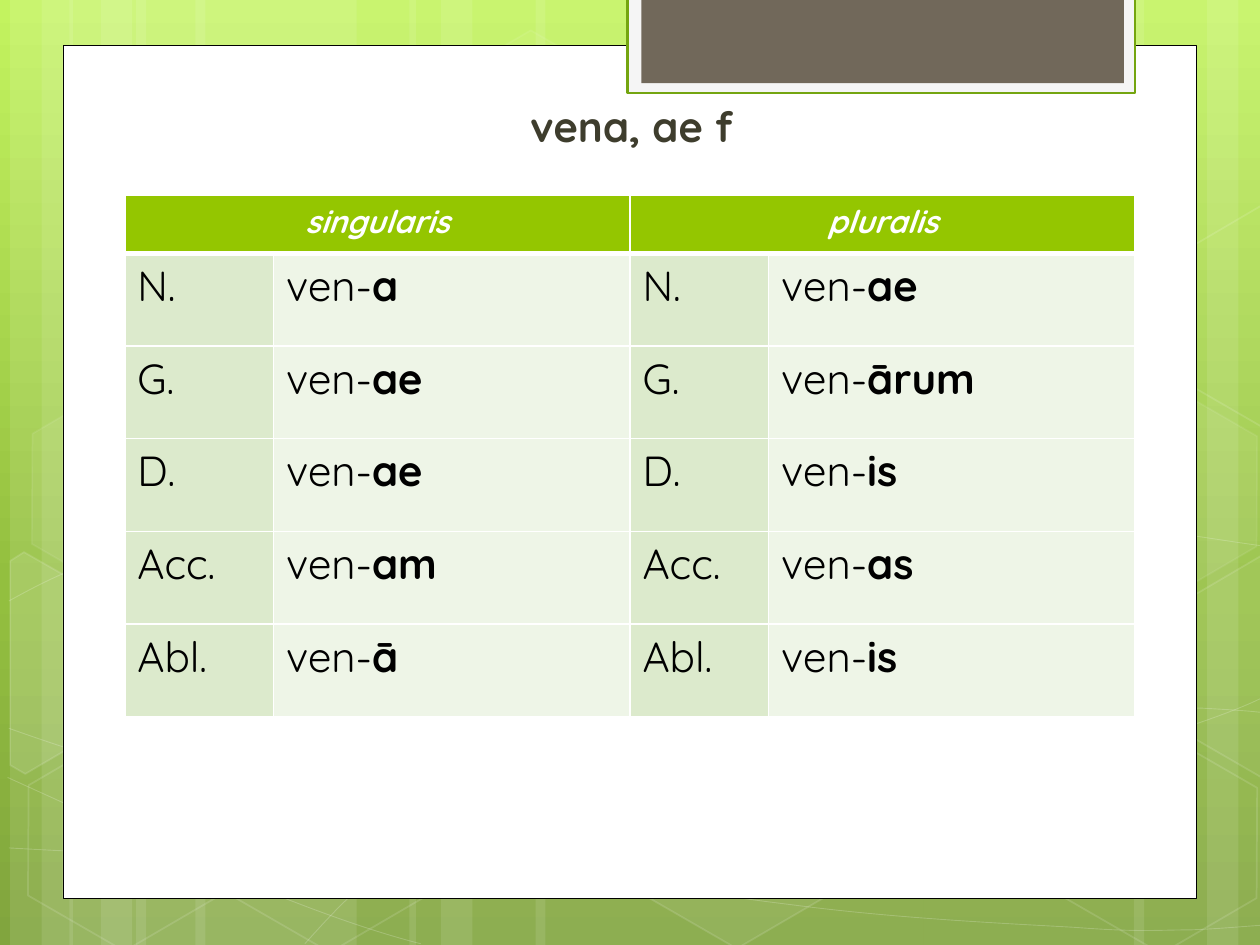
from copy import deepcopy
from math import cos, pi, sin
from lxml import etree
from pptx import Presentation
from pptx.dml.color import RGBColor
from pptx.enum.shapes import MSO_SHAPE
from pptx.enum.text import MSO_ANCHOR, MSO_AUTO_SIZE, PP_ALIGN
from pptx.oxml.ns import qn
from pptx.util import Inches, Pt

RECT, HEX = MSO_SHAPE.RECTANGLE, MSO_SHAPE.HEXAGON
TOP, FIXED, CENTER = MSO_ANCHOR.TOP, MSO_AUTO_SIZE.NONE, PP_ALIGN.CENTER
FACE = "Quicksand"
THEME = {
    "sky": [(0, "C3F35F"), (0.62, "93BF3F"), (1, "81A53E")],
    "white": "FFFFFF", "black": "000000", "title": "3E3D2D",
    "tab": "F5F5F5", "edge": "74A510", "core": "71685A",
    "head": "94C600", "case": "DCEACC", "form": "EEF5E7",
    "title font": {"name": FACE, "size": Pt(24), "bold": True},
    "head font": {"name": FACE, "size": Pt(18), "bold": True, "italic": True},
    "stem font": {"name": FACE, "size": Pt(24), "bold": False},
    "end font": {"name": FACE, "size": Pt(24), "bold": True},
}

deck = Presentation()
deck.slide_width, deck.slide_height = Inches(10), Inches(7.5)
UNIT = deck.slide_width // 10  # the grid has 10 columns and 7.5 rows
ROWS = 7.5
master = deck.slide_master
slide = deck.slides.add_slide(deck.slide_layouts[5])
shapes = slide.shapes


def grid(*spots):
    return [round(spot * UNIT) for spot in spots]


def paint(shape, fill=None, line=None, width=1, clear=None, faint=None):
    """Set fill and line; clear and faint are their opacity in percent."""
    shape.shadow.inherit = False
    for part, color in ((shape.fill, fill), (shape.line.fill, line)):
        if color:
            part.solid()
            part.fore_color.rgb = RGBColor.from_string(THEME[color])
        else:
            part.background()
    if line:
        shape.line.width = Pt(width)
    for where, share in (("", clear), ("/a:ln", faint)):
        if share:
            for tint in shape.element.xpath(f"./p:spPr{where}/a:solidFill/a:srgbClr"):
                etree.SubElement(tint, qn("a:alpha"), val=str(share * 1000))


# Master background gradient, top to bottom
back = master.background.fill
back.gradient()
back.gradient_angle = 270
stops = master.element.xpath(".//p:bg//a:gsLst")[0]
stops.append(deepcopy(stops[-1]))
for stop, (place, color) in zip(back.gradient_stops, THEME["sky"]):
    stop.position = place
    stop.color.rgb = RGBColor.from_string(color)

# Pale vertical strips: left, width
decor = shapes.add_group_shape()
strips = [(1.08, 1.75), (0.08, 0.5), (0.33, 0.83), (1.55, 1.75), (0.55, 0.5),
          (0.8, 0.83), (7.33, 1.75), (9.58, 0.5), (9, 0.83), (4.25, 3.08),
          (3.25, 0.5), (3.5, 0.83)]
for left, wide in strips:
    strip = decor.shapes.add_shape(RECT, *grid(left, 0, wide, ROWS))
    paint(strip, "white", clear=10)

# Thin waves: each is a start and then three points for every Bezier piece
waves = [
    [(0.07, 6.73), (0.61, 6.76), (1.15, 6.79), (1.9, 6.78), (2.65, 6.77),
     (3.58, 6.75), (4.58, 6.65), (5.58, 6.55), (7, 6.36), (7.92, 6.17),
     (8.83, 5.98), (9.77, 5.68), (10.07, 5.51)],
    [(0.07, 4.77), (0.36, 4.61), (0.65, 4.46), (1.21, 4.31), (1.78, 4.16),
     (2.59, 3.94), (3.47, 3.87), (4.36, 3.8), (5.44, 3.79), (6.54, 3.87),
     (7.64, 3.95), (9.47, 4.26), (10.07, 4.34)],
    [(0.06, 6.17), (1.27, 6.72), (2.47, 7.27), (3.34, 7.49)],
    [(0.07, 5.78), (0.38, 5.89), (0.7, 6), (1.28, 6.16), (1.86, 6.31),
     (2.73, 6.56), (3.57, 6.73), (4.4, 6.9), (5.45, 7.08), (6.28, 7.18),
     (7.11, 7.29), (8, 7.33), (8.53, 7.36), (9.05, 7.4), (9.19, 7.38),
     (9.45, 7.38), (9.71, 7.37), (9.89, 7.35), (10.07, 7.34)],
    [(2.42, 7.49), (2.6, 7.29), (2.78, 7.09), (3.02, 6.91), (3.26, 6.73),
     (3.6, 6.53), (3.88, 6.39), (4.16, 6.25), (4.33, 6.19), (4.7, 6.09),
     (5.06, 5.99), (5.73, 5.85), (6.08, 5.78), (6.44, 5.71), (6.49, 5.71),
     (6.8, 5.69), (7.11, 5.66), (7.6, 5.63), (7.94, 5.62), (8.29, 5.61),
     (8.86, 5.62), (8.86, 5.62), (9.08, 5.62), (9.3, 5.62), (9.53, 5.62),
     (9.71, 5.63), (9.88, 5.64), (9.97, 5.65), (10.06, 5.66), (10.03, 5.65),
     (10.06, 5.66)],
]
for wave in waves:
    pen = decor.shapes.build_freeform(*grid(*wave[0]))
    pen.add_line_segments([grid(*dot) for dot in wave[1:]], close=False)
    curve = pen.convert_to_shape()
    paint(curve, line="white", width=0.5, faint=20)
    track = curve.element.xpath(".//a:path")[0]
    legs = track.findall(qn("a:lnTo"))
    for i in range(0, len(legs), 3):
        bend = etree.SubElement(track, qn("a:cubicBezTo"))
        for leg in legs[i:i + 3]:
            bend.append(leg[0])
            track.remove(leg)

# Hexagons: left, top, fill opacity, line opacity
cells = [(3.34, 0.36, 4, 8), (4.97, 5.89, 6, 12), (0.11, 5.91, None, 12),
         (0.14, 3.12, 7, 8), (1.74, 5.92, None, 12), (7.53, 4.53, 10, 12),
         (8.34, 5.93, None, 12), (8.34, 3.14, 7, 8)]
for left, top, clear, faint in cells:
    cell = decor.shapes.add_shape(HEX, *grid(left, top, 1.75, 1.52))
    cell.rotation = 30
    cell.adjustments[0] = 0.285
    paint(cell, "white" if clear else None, "white", clear=clear, faint=faint)

# Hexagons cut off by the slide's sides: turning point, corners, opacity
right = [(9.26, 4.85), (10.01, 4.41), (10.09, 4.46), (10.09, 6.13),
         (10.02, 6.17), (9.26, 5.73)]
cuts = [
    ((0.36, 5.35), [(0.08, 4.45), (0.19, 4.38), (0.96, 4.82), (0.95, 5.7),
                    (0.2, 6.14), (0.08, 6.07)], 10),
    ((9.85, 5.2), right, 4),
    ((9.85, 2.41), [(x, y - 2.78) for x, y in right], None),
]
c, s = cos(pi / 6), sin(pi / 6)
for (mx, my), dots, clear in cuts:
    flat = [grid(mx + (x - mx) * c + (y - my) * s, my + (y - my) * c - (x - mx) * s)
            for x, y in dots]
    pen = decor.shapes.build_freeform(*flat[0])
    pen.add_line_segments(flat[1:], close=True)
    cut = pen.convert_to_shape()
    cut.rotation = 30
    paint(cut, "white" if clear else None, "white", clear=clear, faint=12)

# Card with its tab
panels = [((0.5, 0.36, 9, 6.77), "white", "black", 0.5),
          ((4.98, -0.02, 4.03, 0.76), "tab", "edge", 1.25),
          ((5.09, -0.02, 3.83, 0.68), "core", None, 0)]
scenery = [decor]
for box, fill, line, width in panels:
    panel = shapes.add_shape(RECT, *grid(*box))
    paint(panel, fill, line, width)
    scenery.append(panel)

# The scenery belongs to the master
for part in scenery:
    master.shapes.element.append(part.element)
for number, tag in enumerate(master.element.xpath(".//p:cNvPr"), 1):
    tag.set("id", str(number))

# Title
title = shapes.title
title.left, title.top, title.width, title.height = grid(1.22, 0.76, 7.41, 0.55)
frame = title.text_frame
layout = {"auto_size": FIXED, "vertical_anchor": TOP, "word_wrap": True,
          "margin_left": Inches(0.27), "margin_right": Inches(0.1),
          "margin_top": Inches(0.04)}
for key, value in layout.items():
    setattr(frame, key, value)
frame.text = "vena, ae f"
frame.paragraphs[0].alignment = CENTER
font = frame.paragraphs[0].runs[0].font
for key, value in THEME["title font"].items():
    setattr(font, key, value)
font.color.rgb = RGBColor.from_string(THEME["title"])

# Declension table
cases = ["N.", "G.", "D.", "Acc.", "Abl."]
ends = {"singularis": ["a", "ae", "ae", "am", "ā"],
        "pluralis": ["ae", "ārum", "is", "as", "is"]}
widths = [1.18, 2.83, 1.1, 2.91]
tall, head = 4.14, 0.46
heights = [head] + [(tall - head) / len(cases)] * len(cases)
table = shapes.add_table(len(heights), len(widths),
                         *grid(0.99, 1.55, sum(widths), tall)).table
table.horz_banding = False
for col, wide in zip(table.columns, grid(*widths)):
    col.width = wide
for r, (row, high) in enumerate(zip(table.rows, grid(*heights))):
    row.height = high
    for cell in row.cells:
        rim = cell._tc.get_or_add_tcPr()
        for side in "LRTB":
            thick = (r, side) in ((0, "B"), (1, "T"))
            edge = etree.SubElement(rim, qn(f"a:ln{side}"), w=str(Pt(3 if thick else 1)))
            ink = etree.SubElement(edge, qn("a:solidFill"))
            etree.SubElement(ink, qn("a:srgbClr"), val=THEME["white"])

# Each entry: row, column, fill, text colour, runs of text and style
entries = []
for col, (number, tails) in zip((0, 2), ends.items()):
    table.cell(0, col).merge(table.cell(0, col + 1))
    entries.append((0, col, "head", "white", [(number, "head font")]))
    for row, (case, tail) in enumerate(zip(cases, tails), 1):
        entries.append((row, col, "case", "black", [(case, "stem font")]))
        entries.append((row, col + 1, "form", "black",
                        [("ven-", "stem font"), (tail, "end font")]))
for row, col, fill, ink, runs in entries:
    cell = table.cell(row, col)
    cell.fill.solid()
    cell.fill.fore_color.rgb = RGBColor.from_string(THEME[fill])
    line = cell.text_frame.paragraphs[0]
    if fill == "head":
        line.alignment = CENTER
    for text, style in runs:
        run = line.add_run()
        run.text = text
        for key, value in THEME[style].items():
            setattr(run.font, key, value)
        run.font.color.rgb = RGBColor.from_string(THEME[ink])

deck.save("out.pptx")
